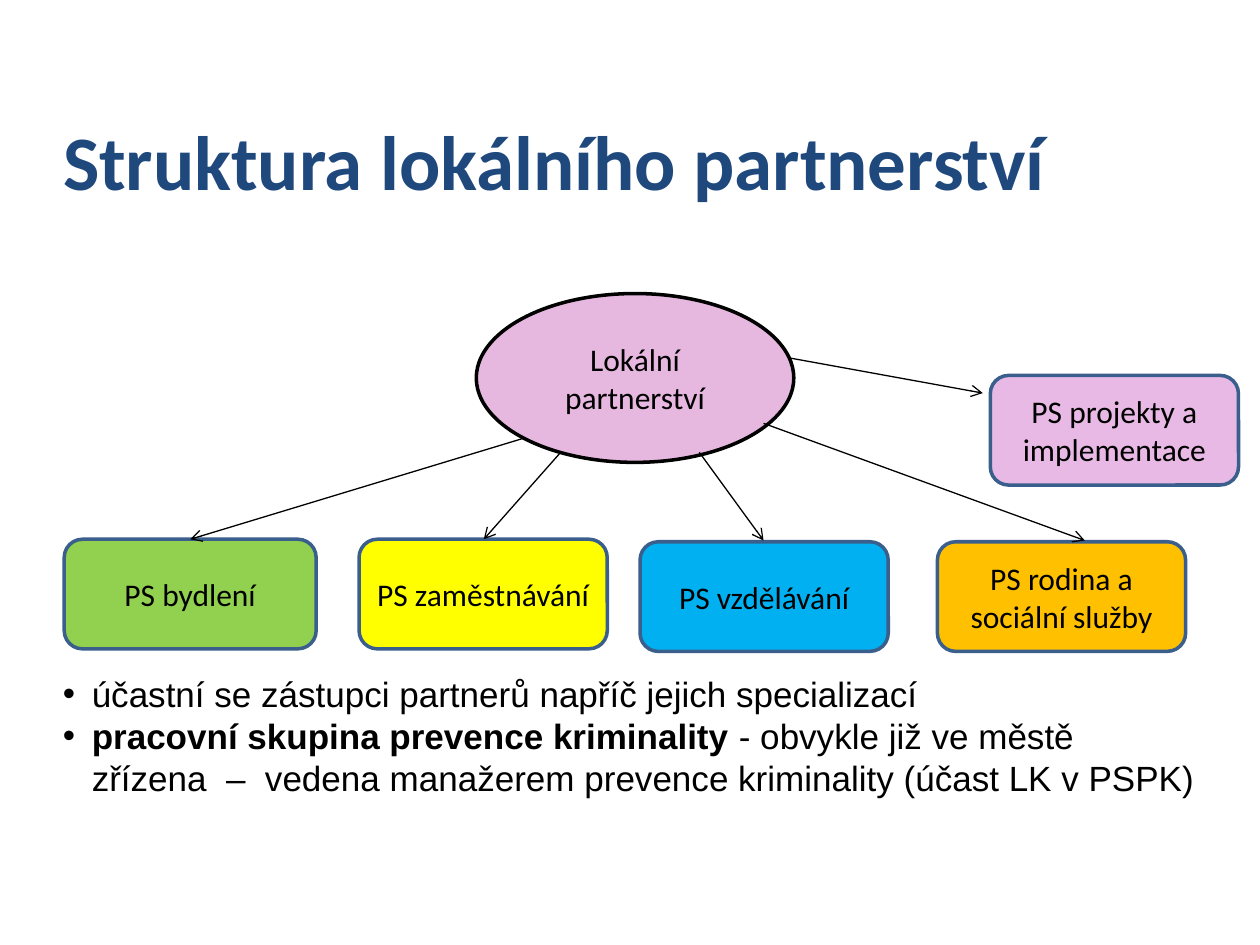
from lxml import etree
from pptx import Presentation
from pptx.dml.color import RGBColor
from pptx.enum import shapes, text
from pptx.oxml.ns import qn
from pptx.util import Inches, Pt

# Content
TITLE = "Struktura lokálního partnerství"
HUB = ("Lokální partnerství", (3.78, 2.33, 2.52, 1.34), "E6B8DF")
GROUP_HEIGHT = 0.87
# label, left, top, width, fill, opacity in percent
GROUPS = [
    ("PS bydlení", 0.51, 4.28, 2, "92D050", 100),
    ("PS zaměstnávání", 2.85, 4.28, 1.97, "FFFF00", 100),
    ("PS vzdělávání", 5.08, 4.3, 1.97, "00B0F0", 100),
    ("PS rodina a sociální služby", 7.44, 4.3, 1.97, "FFC000", 100),
    ("PS projekty a implementace", 7.86, 2.98, 1.97, "B61AAB", 30),
]
# start and end of each arrow
ARROWS = [
    ((4.15, 3.48), (1.51, 4.28)),
    ((4.45, 3.59), (3.84, 4.28)),
    ((5.55, 3.59), (6.06, 4.29)),
    ((6.06, 3.36), (8.61, 4.29)),
    ((6.26, 2.84), (7.8, 3.12)),
]
# each bullet is a list of (text, bold)
BULLETS = [
    [("účastní se zástupci partnerů napříč jejich specializací", False)],
    [("pracovní skupina prevence kriminality ", True),
     ("- obvykle již ve městě zřízena  –  vedena manažerem prevence "
      "kriminality (účast LK v PSPK)", False)],
]


def color(value):
    return RGBColor.from_string(value)


def set_format(target, **values):
    for name, value in values.items():
        setattr(target, name, value)


def set_font(font, name, size, value="000000", bold=False):
    set_format(font, name=name, size=Pt(size), bold=bold)
    font.color.rgb = color(value)


def inches(values):
    return [Inches(value) for value in values]


def add_node(slide, kind, label, place, fill, line, opacity=100):
    shape = slide.shapes.add_shape(kind, *inches(place))
    shape.shadow.inherit = False
    shape.fill.solid()
    shape.fill.fore_color.rgb = color(fill)
    if opacity < 100:
        fill_color = shape._element.spPr.find(qn("a:solidFill"))[0]
        etree.SubElement(fill_color, qn("a:alpha"), val=str(opacity * 1000))
    shape.line.color.rgb = color(line)
    shape.line.width = Pt(2)
    set_format(shape.text_frame, text=label, word_wrap=True,
               vertical_anchor=text.MSO_ANCHOR.MIDDLE)
    paragraph = shape.text_frame.paragraphs[0]
    paragraph.alignment = text.PP_ALIGN.CENTER
    set_font(paragraph.runs[0].font, "Calibri", 18)


def add_arrow(slide, start, end):
    connector = slide.shapes.add_connector(
        shapes.MSO_CONNECTOR.STRAIGHT, *inches(start + end))
    connector.line.color.rgb = color("000000")
    connector.line.width = Pt(0.75)
    etree.SubElement(connector.line._get_or_add_ln(), qn("a:tailEnd"), type="arrow")
    etree.SubElement(connector._element.spPr, qn("a:effectLst"))


def add_bullet(paragraph, runs):
    properties = paragraph._p.get_or_add_pPr()
    properties.set("marL", str(Inches(0.31)))
    properties.set("indent", str(Inches(-0.23)))
    etree.SubElement(properties, qn("a:buFont"), typeface="Arial")
    etree.SubElement(properties, qn("a:buChar"), char="•")
    paragraph.line_spacing = Pt(24)
    for words, bold in runs:
        run = paragraph.add_run()
        run.text = words
        set_font(run.font, "Arial", 20, bold=bold)


def main():
    presentation = Presentation()
    presentation.slide_width, presentation.slide_height = inches((10, 7.5))
    slide = presentation.slides.add_slide(presentation.slide_layouts[5])

    # Title
    title = slide.shapes.title
    left, top, width, height = inches((0.4, 0.85, 9.21, 0.84))
    set_format(title, left=left, top=top, width=width, height=height)
    set_format(title.text_frame, text=TITLE, word_wrap=True,
               auto_size=text.MSO_AUTO_SIZE.NONE,
               vertical_anchor=text.MSO_ANCHOR.TOP)
    heading = title.text_frame.paragraphs[0]
    heading.alignment = text.PP_ALIGN.LEFT
    set_font(heading.runs[0].font, "Calibri", 44, "1F497D", True)

    # Partnership and its working groups
    label, place, fill = HUB
    add_node(slide, shapes.MSO_SHAPE.OVAL, label, place, fill, "000000")
    for label, left, top, width, fill, opacity in GROUPS:
        add_node(slide, shapes.MSO_SHAPE.FLOWCHART_ALTERNATE_PROCESS, label,
                 (left, top, width, GROUP_HEIGHT), fill, "3A5F8C", opacity)
    for start, end in ARROWS:
        add_arrow(slide, start, end)

    # Notes under the diagram
    frame = slide.shapes.add_textbox(*inches((0.32, 5.29, 9.29, 1.14))).text_frame
    frame.word_wrap = True
    for index, runs in enumerate(BULLETS):
        add_bullet(frame.add_paragraph() if index else frame.paragraphs[0], runs)

    presentation.save("out.pptx")


if __name__ == "__main__":
    main()
